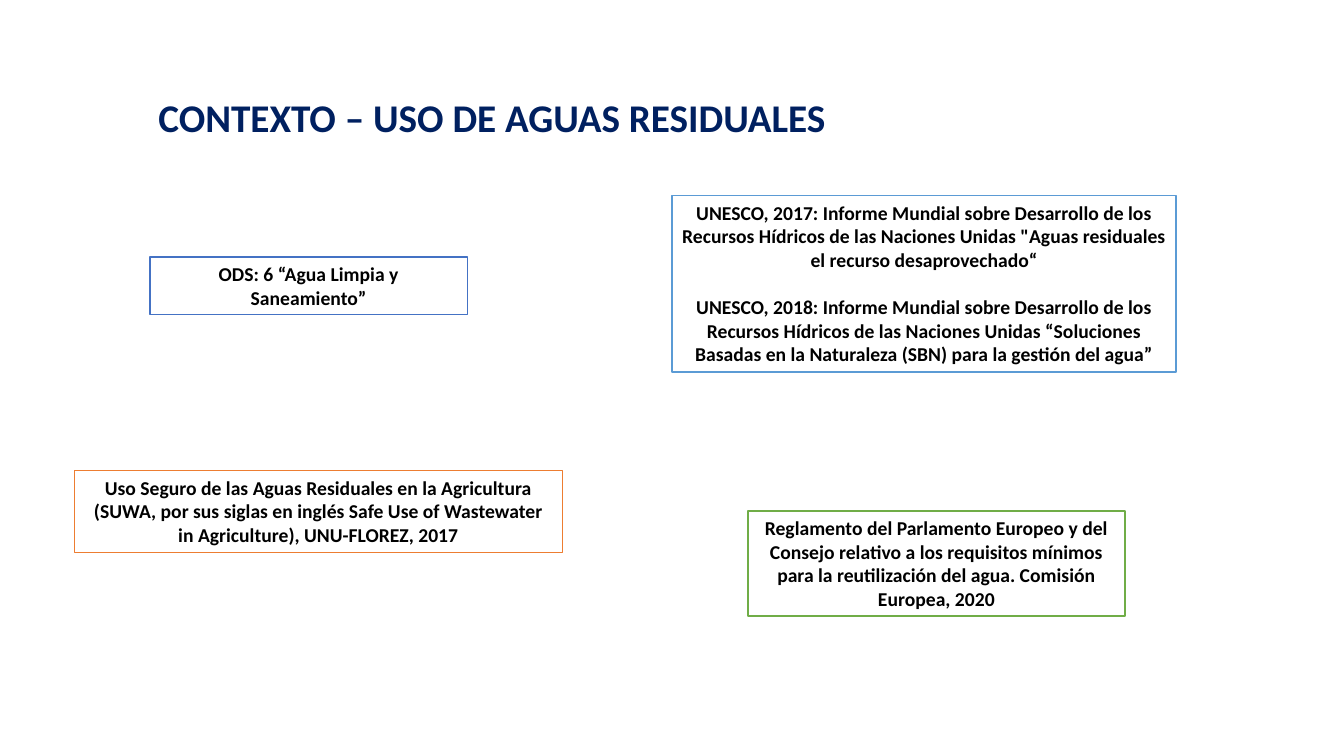
from pptx import Presentation
from pptx.dml.color import RGBColor
from pptx.enum.shapes import MSO_SHAPE
from pptx.enum.text import MSO_ANCHOR, MSO_AUTO_SIZE, PP_ALIGN
from pptx.util import Cm, Pt

RECTANGLE = MSO_SHAPE.RECTANGLE
CENTER = PP_ALIGN.CENTER
TOP, MIDDLE = MSO_ANCHOR.TOP, MSO_ANCHOR.MIDDLE
NO_FIT, GROW = MSO_AUTO_SIZE.NONE, MSO_AUTO_SIZE.SHAPE_TO_FIT_TEXT

FONT = "Calibri"
COLORS = {
    "title": "002060",
    "text": "000000",
    "fill": "FFFFFF",
    "orange": "ED7D31",
    "green": "70AD47",
    "blue": "4472C4",
    "sky": "5B9BD5",
}
TITLE_BOX = (2.49, 1.63, 19.81, 2.64)
# Box in cm (left, top, width, height), border colour, paragraphs
REFERENCES = [
    ((1.88, 11.86, 12.29, 2.06), "orange", [
        "Uso Seguro de las Aguas Residuales en la Agricultura (SUWA, por sus "
        "siglas en inglés Safe Use of Wastewater in Agriculture), "
        "UNU-FLOREZ, 2017"]),
    ((18.85, 12.88, 9.5, 2.64), "green", [
        "Reglamento del Parlamento Europeo y del Consejo relativo a los "
        "requisitos mínimos para la reutilización del agua. Comisión "
        "Europea, 2020"]),
    ((3.78, 6.48, 8, 1.45), "blue", ["ODS: 6 “Agua Limpia y Saneamiento”"]),
    ((16.94, 4.93, 12.7, 4.45), "sky", [
        "UNESCO, 2017: Informe Mundial sobre Desarrollo de los Recursos "
        "Hídricos de las Naciones Unidas \"Aguas residuales el recurso "
        "desaprovechado“",
        "UNESCO, 2018: Informe Mundial sobre Desarrollo de los Recursos "
        "Hídricos de las Naciones Unidas “Soluciones Basadas en la "
        "Naturaleza (SBN) para la gestión del agua”"]),
]


def rgb(name):
    return RGBColor.from_string(COLORS[name])


def write_paragraph(p, text, size, color):
    p.text = text
    p.alignment = CENTER
    for r in p.runs:
        r.font.name = FONT
        r.font.size = Pt(size)
        r.font.bold = True
        r.font.color.rgb = rgb(color)


def add_title(s, box, text):
    title = s.shapes.title
    title.left, title.top, title.width, title.height = map(Cm, box)
    tf = title.text_frame
    tf.auto_size = NO_FIT
    tf.vertical_anchor = MIDDLE
    write_paragraph(tf.paragraphs[0], text, 28, "title")


def add_reference(s, box, border, texts):
    sp = s.shapes.add_shape(RECTANGLE, *map(Cm, box))
    sp.shadow.inherit = False
    sp.fill.solid()
    sp.fill.fore_color.rgb = rgb("fill")
    sp.line.color.rgb = rgb(border)
    sp.line.width = Pt(1)
    tf = sp.text_frame
    tf.word_wrap = True
    tf.auto_size = GROW
    tf.vertical_anchor = TOP
    for i, text in enumerate(texts):
        p = tf.add_paragraph() if i else tf.paragraphs[0]
        write_paragraph(p, text, 14, "text")
        if i:
            p.space_before = Pt(17)


def main():
    prs = Presentation()
    prs.slide_width, prs.slide_height = Cm(33.87), Cm(19.05)
    s = prs.slides.add_slide(prs.slide_layouts.get_by_name("Title Only"))
    add_title(s, TITLE_BOX, "CONTEXTO – USO DE AGUAS RESIDUALES")
    for box, border, texts in REFERENCES:
        add_reference(s, box, border, texts)
    prs.save("out.pptx")


if __name__ == "__main__":
    main()
